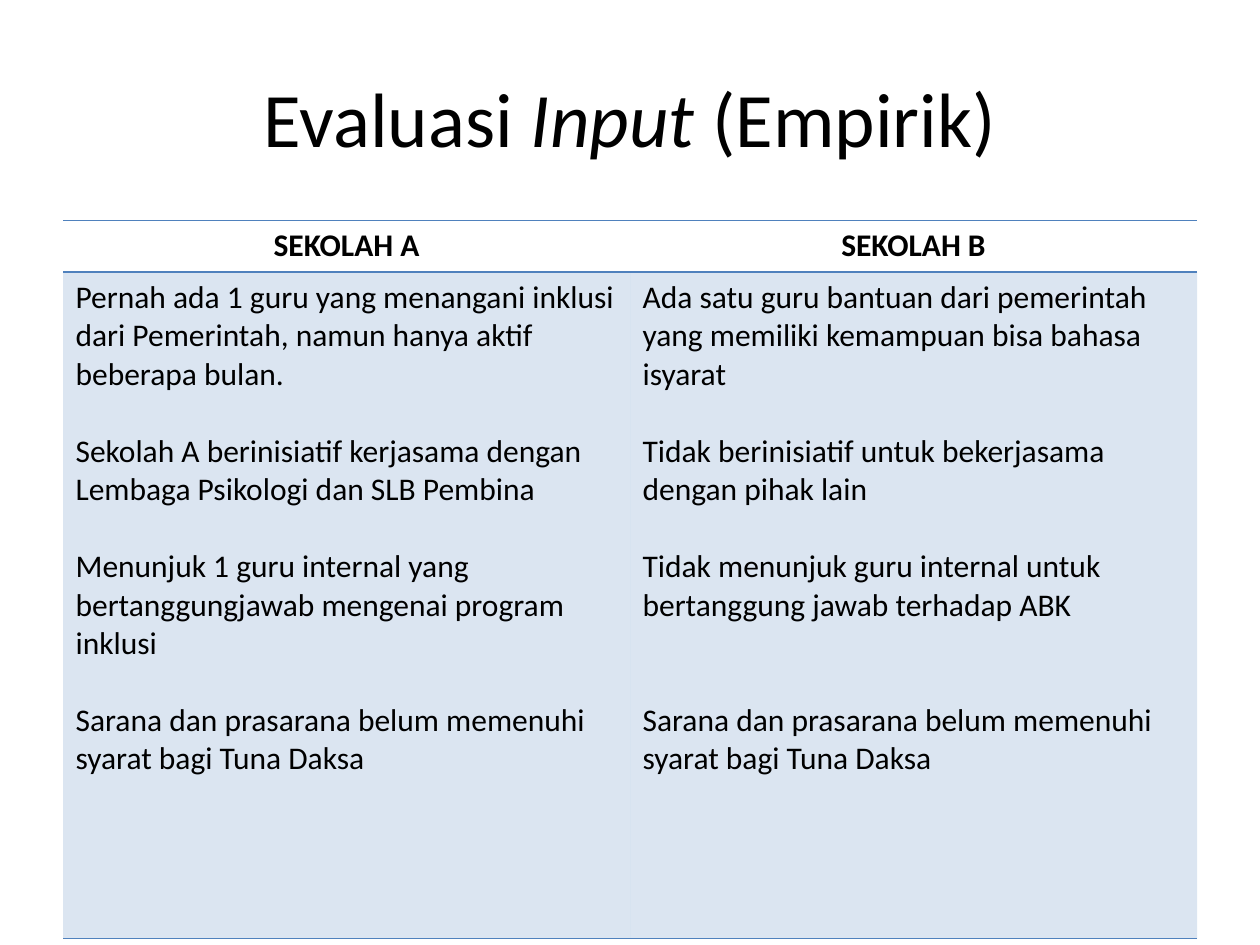
from lxml.etree import SubElement
from pptx import Presentation
from pptx.dml.color import RGBColor
from pptx.enum.text import MSO_ANCHOR, PP_ALIGN
from pptx.oxml.ns import qn
from pptx.util import Inches, Pt

BLACK = RGBColor(0x00, 0x00, 0x00)
BLUE = RGBColor(0x4F, 0x81, 0xBD)
FONT = "Calibri"
PLAIN_TABLE_STYLE = "{2D5ABB26-0587-4C30-8999-92F81FD0307C}"
LINE = 22  # height in points of one text line at 18 pt

TITLE_RUNS = [("Evaluasi ", False), ("Input ", True), ("(Empirik)", False)]

# Heading, then (text, empty lines above it) for each finding
SCHOOLS = [
    ("SEKOLAH A", [
        ("Pernah ada 1 guru yang menangani inklusi dari Pemerintah, "
         "namun hanya aktif beberapa bulan.", 0),
        ("Sekolah A berinisiatif kerjasama dengan Lembaga Psikologi dan SLB Pembina", 1),
        ("Menunjuk 1 guru internal yang bertanggungjawab mengenai program inklusi", 1),
        ("Sarana dan prasarana belum memenuhi syarat bagi Tuna Daksa", 1),
    ]),
    ("SEKOLAH B", [
        ("Ada satu guru bantuan dari pemerintah yang memiliki kemampuan "
         "bisa bahasa isyarat", 0),
        ("Tidak berinisiatif untuk bekerjasama dengan pihak lain", 1),
        ("Tidak menunjuk guru internal untuk bertanggung jawab terhadap ABK", 1),
        ("Sarana dan prasarana belum memenuhi syarat bagi Tuna Daksa", 2),
    ]),
]


def format_font(paragraph, size, bold=False):
    font = paragraph.font
    font.name, font.size, font.bold = FONT, Pt(size), bold
    font.color.rgb = BLACK


def fill_title(title):
    title.left, title.top = Inches(0.5), Inches(0.3)
    title.width, title.height = Inches(9), Inches(1.25)
    title.text_frame.vertical_anchor = MSO_ANCHOR.MIDDLE
    paragraph = title.text_frame.paragraphs[0]
    paragraph.alignment = PP_ALIGN.CENTER
    format_font(paragraph, 44)
    for text, italic in TITLE_RUNS:
        run = paragraph.add_run()
        run.text = text
        run.font.italic = italic


def add_border(cell, side):
    """Draw a 1 pt blue line on a side: lnT or lnB, in that order."""
    line = SubElement(cell._tc.get_or_add_tcPr(), qn(f"a:{side}"), w=str(Pt(1)))
    fill = SubElement(line, qn("a:solidFill"))
    SubElement(fill, qn("a:srgbClr"), val=str(BLUE))


def tint_cell(cell):
    """Fill the cell with blue at 20 % opacity."""
    cell.fill.solid()
    cell.fill.fore_color.rgb = BLUE
    color = cell._tc.tcPr.find(qn("a:solidFill")).find(qn("a:srgbClr"))
    SubElement(color, qn("a:alpha"), val="20000")


def fill_header(cell, heading):
    cell.text = heading
    paragraph = cell.text_frame.paragraphs[0]
    paragraph.alignment = PP_ALIGN.CENTER
    format_font(paragraph, 18, bold=True)
    add_border(cell, "lnT")
    add_border(cell, "lnB")
    cell.fill.background()


def fill_findings(cell, findings):
    cell.text = "\n".join(text for text, _ in findings)
    for paragraph, (_, empty_lines) in zip(cell.text_frame.paragraphs, findings):
        format_font(paragraph, 18)
        if empty_lines:
            paragraph.space_before = Pt(empty_lines * LINE)
    add_border(cell, "lnB")
    tint_cell(cell)


def add_school_table(slide):
    header_height, body_height = Inches(0.41), Inches(5.29)
    table = slide.shapes.add_table(
        2, len(SCHOOLS), Inches(0.5), Inches(1.75), Inches(9),
        header_height + body_height).table
    table._tbl.tblPr.find(qn("a:tableStyleId")).text = PLAIN_TABLE_STYLE
    table.horz_banding = False
    table.rows[0].height, table.rows[1].height = header_height, body_height
    for column, (heading, findings) in enumerate(SCHOOLS):
        fill_header(table.cell(0, column), heading)
        fill_findings(table.cell(1, column), findings)


def main():
    presentation = Presentation()
    presentation.slide_width, presentation.slide_height = Inches(10), Inches(7.5)
    slide = presentation.slides.add_slide(presentation.slide_layouts[5])
    fill_title(slide.shapes.title)
    add_school_table(slide)
    presentation.save("out.pptx")


if __name__ == "__main__":
    main()
